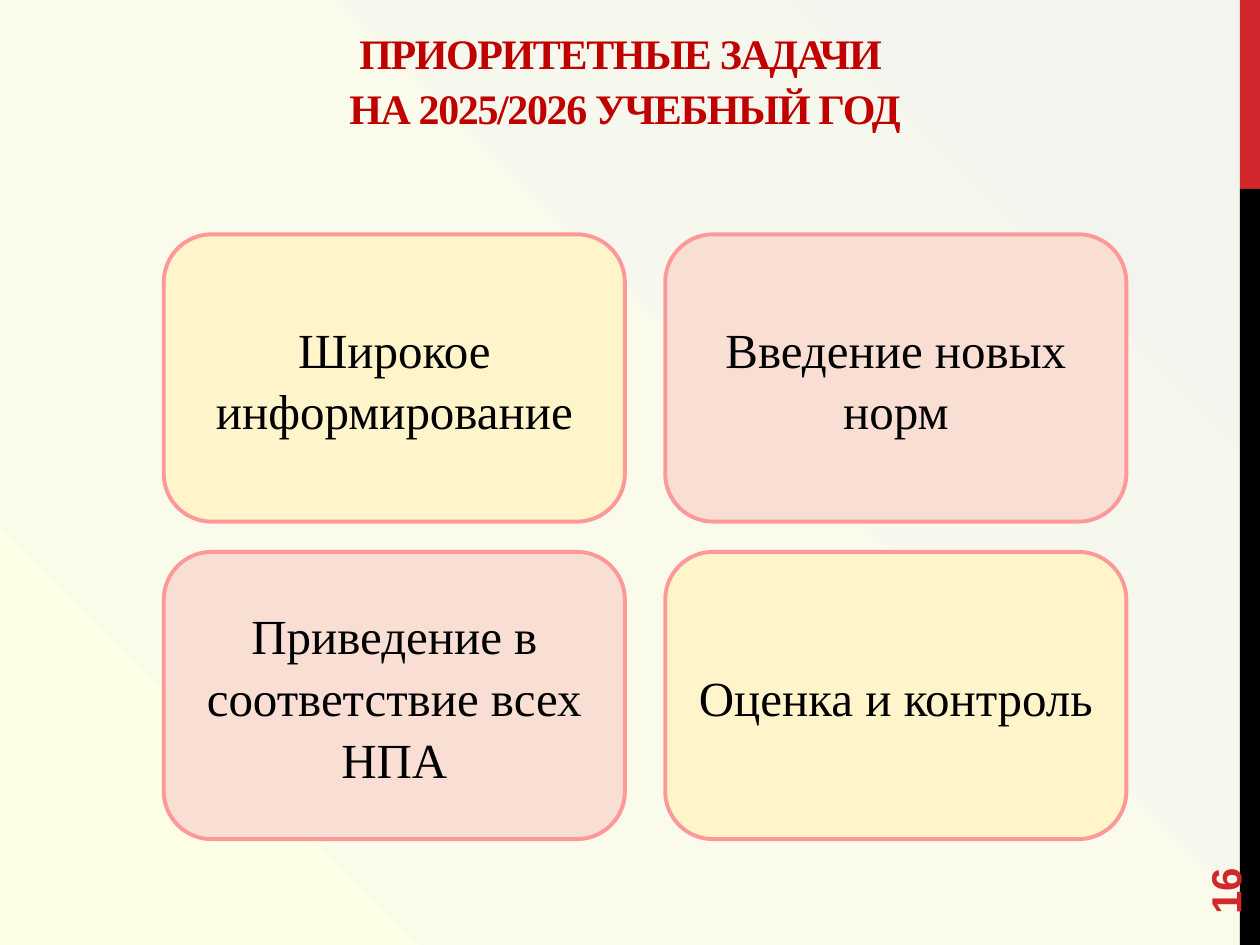
from pptx import Presentation
from pptx.dml.color import RGBColor
from pptx.enum.shapes import MSO_SHAPE
from pptx.enum.text import MSO_ANCHOR, PP_ALIGN
from pptx.oxml import parse_xml
from pptx.oxml.ns import qn
from pptx.util import Inches, Pt

RECTANGLE, ROUNDED = MSO_SHAPE.RECTANGLE, MSO_SHAPE.ROUNDED_RECTANGLE
LEFT, CENTER = PP_ALIGN.LEFT, PP_ALIGN.CENTER
TOP, MIDDLE = MSO_ANCHOR.TOP, MSO_ANCHOR.MIDDLE

COLORS = {
    "red": "D1282E", "black": "000000", "title": "C00000",
    "cream": "FFF4CA", "pink": "F8DED3", "border": "FF9999",
}
BACKGROUND_STOPS = [(0, "FDFFE7"), (38, "FAFBEA"), (99, "F4F4EF")]
TITLE = ["ПРИОРИТЕТНЫЕ ЗАДАЧИ ", "НА 2025/2026 УЧЕБНЫЙ ГОД"]
TASKS = [
    ["Широкое информирование", "Введение новых норм"],
    ["Приведение в соответствие всех НПА", "Оценка и контроль"],
]
PAGE_NUMBER = "16"

# Card grid, in inches
GRID_LEFT, GRID_TOP = 1.3, 1.86
CARD_WIDTH, CARD_HEIGHT = 3.66, 2.28
GAP_X, GAP_Y = 0.32, 0.24


def rgb(name):
    return RGBColor.from_string(COLORS[name])


def add_block(page, shape_type, bounds, fill, border=None):
    block = page.shapes.add_shape(shape_type, *map(Inches, bounds))
    block.shadow.inherit = False
    block.fill.solid()
    block.fill.fore_color.rgb = rgb(fill)
    if border:
        block.line.color.rgb = rgb(border)
        block.line.width = Pt(2.25)
    else:
        block.line.fill.background()
    return block


def write_text(box, lines, size, color="black", font="Times New Roman",
               bold=False, align=CENTER, anchor=MIDDLE, before=0,
               line_spacing=1.05, tracking=0):
    frame = box.text_frame
    frame.word_wrap = True
    frame.vertical_anchor = anchor
    for index, line in enumerate(lines):
        para = frame.add_paragraph() if index else frame.paragraphs[0]
        para.alignment = align
        para.space_before = Pt(before)
        para.line_spacing = line_spacing
        span = para.add_run()
        span.text = line
        span.font.name, span.font.size, span.font.bold = font, Pt(size), bold
        span.font.color.rgb = rgb(color)
        if tracking:
            span.font._element.set("spc", str(round(tracking * 100)))


def set_background(page):
    page.background.fill.solid()
    holder = page._element.find(".//" + qn("p:bgPr"))
    stops = "".join(
        f'<a:gs pos="{position * 1000}"><a:srgbClr val="{color}"/></a:gs>'
        for position, color in BACKGROUND_STOPS)
    gradient = parse_xml(
        '<a:gradFill xmlns:a="http://schemas.openxmlformats.org/drawingml/2006/main"'
        f' rotWithShape="1"><a:gsLst>{stops}</a:gsLst><a:path path="circle">'
        '<a:fillToRect t="100000" r="100000"/></a:path></a:gradFill>')
    holder.replace(holder[0], gradient)


def main():
    deck = Presentation()
    deck.slide_width, deck.slide_height = Inches(10), Inches(7.5)
    page = deck.slides.add_slide(deck.slide_layouts[6])
    set_background(page)

    # Side stripe
    add_block(page, RECTANGLE, (9.84, 0, 0.16, 1.5), "red")
    add_block(page, RECTANGLE, (9.84, 1.5, 0.16, 6), "black")

    # Page number
    number = page.shapes.add_textbox(*map(Inches, (9, 6.44, 1.44, 0.4)))
    number.rotation = 270
    write_text(number, [PAGE_NUMBER], 24, color="red", font="Arial",
               bold=True, align=LEFT, line_spacing=1)

    # Title
    title = page.shapes.add_textbox(*map(Inches, (1.22, 0.19, 7.48, 0.84)))
    frame = title.text_frame
    frame.margin_left = frame.margin_right = frame.margin_bottom = 0
    frame.margin_top = Inches(0.01)
    write_text(title, TITLE, 24, color="title", bold=True, anchor=TOP,
               before=1, tracking=-0.8)

    # Task cards, colours alternating like a chessboard
    for row, tasks in enumerate(TASKS):
        for column, task in enumerate(tasks):
            left = GRID_LEFT + column * (CARD_WIDTH + GAP_X)
            top = GRID_TOP + row * (CARD_HEIGHT + GAP_Y)
            fill = "pink" if (row + column) % 2 else "cream"
            card = add_block(page, ROUNDED, (left, top, CARD_WIDTH, CARD_HEIGHT),
                             fill, "border")
            write_text(card, [task], 28)

    deck.save("out.pptx")


if __name__ == "__main__":
    main()
